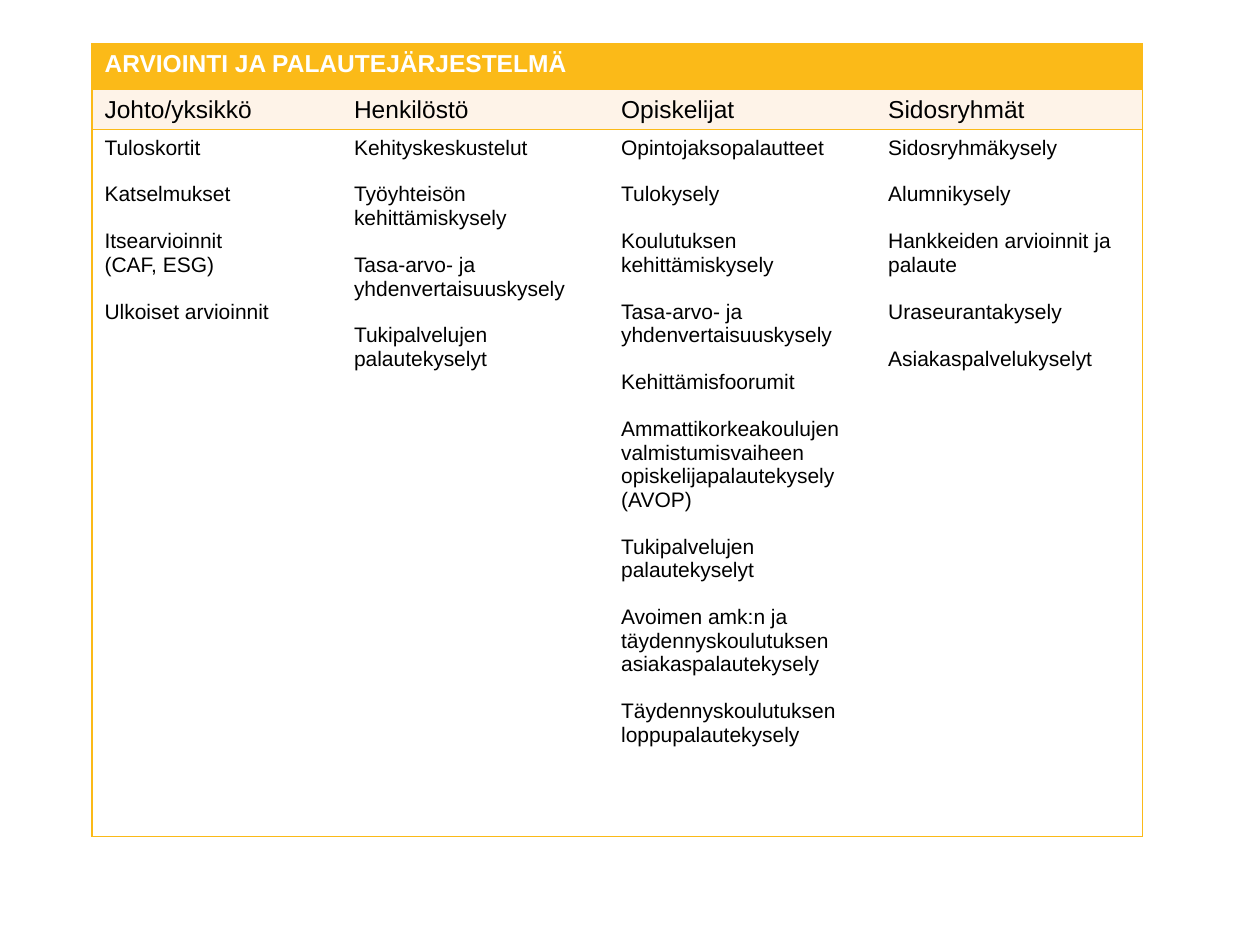
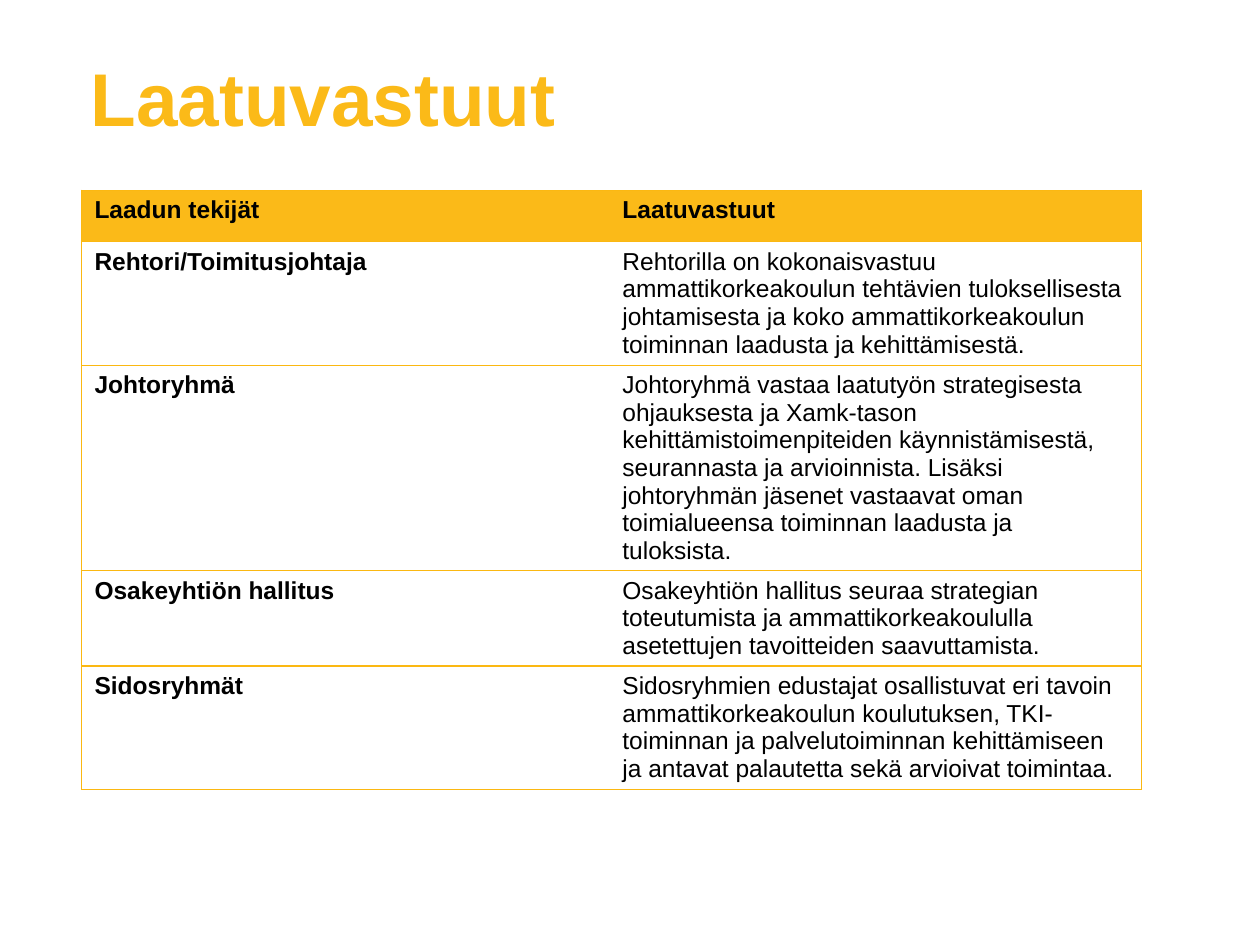
from copy import deepcopy
from dataclasses import dataclass

from lxml import etree
from pptx import Presentation
from pptx.dml.color import RGBColor
from pptx.enum.text import MSO_ANCHOR, MSO_AUTO_SIZE, PP_ALIGN
from pptx.oxml.ns import qn
from pptx.util import Inches, Pt

LEFT = PP_ALIGN.LEFT
MIDDLE = MSO_ANCHOR.MIDDLE
NO_AUTOFIT = MSO_AUTO_SIZE.NONE
TITLE_ONLY, BLANK = 5, 6


@dataclass(frozen=True)
class Theme:
    font: str = "Arial"
    gold: str = "FBBA18"
    rule: str = "FBB812"
    cream: str = "FEF3E8"
    white: str = "FFFFFF"
    black: str = "000000"
    title_size: float = 42.7
    table_size: float = 14
    list_size: float = 12
    list_gap: float = 13.4


THEME = Theme()

# Content of the feedback table: column heading and its list
FEEDBACK_TITLE = "ARVIOINTI JA PALAUTEJÄRJESTELMÄ"
FEEDBACK = {
    "Johto/yksikkö": [
        "Tuloskortit", "Katselmukset", "Itsearvioinnit\v(CAF, ESG)",
        "Ulkoiset arvioinnit",
    ],
    "Henkilöstö": [
        "Kehityskeskustelut", "Työyhteisön kehittämiskysely",
        "Tasa-arvo- ja yhdenvertaisuuskysely", "Tukipalvelujen palautekyselyt",
    ],
    "Opiskelijat": [
        "Opintojaksopalautteet", "Tulokysely", "Koulutuksen kehittämiskysely",
        "Tasa-arvo- ja yhdenvertaisuuskysely", "Kehittämisfoorumit",
        "Ammattikorkeakoulujen valmistumisvaiheen "
        "opiskelijapalautekysely\v(AVOP)",
        "Tukipalvelujen palautekyselyt",
        "Avoimen amk:n ja täydennyskoulutuksen asiakaspalautekysely",
        "Täydennyskoulutuksen loppupalautekysely",
    ],
    "Sidosryhmät": [
        "Sidosryhmäkysely", "Alumnikysely", "Hankkeiden arvioinnit ja palaute",
        "Uraseurantakysely", "Asiakaspalvelukyselyt",
    ],
}

# Content of the responsibility table: actor, duty and row height
RESPONSIBILITIES = [
    ("Laadun tekijät", "Laatuvastuut", 0.41),
    ("Rehtori/Toimitusjohtaja",
     "Rehtorilla on kokonaisvastuu ammattikorkeakoulun tehtävien "
     "tuloksellisesta johtamisesta ja koko ammattikorkeakoulun toiminnan "
     "laadusta ja kehittämisestä.", 0.98),
    ("Johtoryhmä",
     "Johtoryhmä vastaa laatutyön strategisesta ohjauksesta ja Xamk-tason "
     "kehittämistoimenpiteiden käynnistämisestä, seurannasta ja arvioinnista. "
     "Lisäksi johtoryhmän jäsenet vastaavat oman toimialueensa toiminnan "
     "laadusta ja tuloksista.", 1.41),
    ("Osakeyhtiön hallitus",
     "Osakeyhtiön hallitus seuraa strategian toteutumista ja "
     "ammattikorkeakoululla asetettujen tavoitteiden saavuttamista.", 0.75),
    ("Sidosryhmät",
     "Sidosryhmien edustajat osallistuvat eri tavoin ammattikorkeakoulun "
     "koulutuksen, TKI-toiminnan ja palvelutoiminnan kehittämiseen ja antavat "
     "palautetta sekä arvioivat toimintaa.", 0.98),
]


def write_text(text_frame, *texts, size=THEME.table_size, color=THEME.black,
               bold=False, gap=0):
    """Write one paragraph per text, with gap points between them."""
    for index, text in enumerate(texts):
        paragraph = (text_frame.add_paragraph() if index
                     else text_frame.paragraphs[0])
        paragraph.text = text
        paragraph.alignment = LEFT
        paragraph.space_before = Pt(gap if index else 0)
        for run in paragraph.runs:
            run.font.name = THEME.font
            run.font.size = Pt(size)
            run.font.bold = bold
            run.font.color.rgb = RGBColor.from_string(color)
        # Line breaks take the size of the text around them
        for line_break in paragraph._p.findall(qn("a:br")):
            line_break.append(deepcopy(paragraph.runs[0]._r.rPr))


def set_borders(cell, sides, color, width):
    """Draw the borders named in sides (L, R, T, B) and clear the others."""
    properties = cell._tc.get_or_add_tcPr()
    for side in "LRTB":
        line = etree.SubElement(properties, qn(f"a:ln{side}"),
                                w=str(Pt(width)))
        if side in sides:
            fill = etree.SubElement(line, qn("a:solidFill"))
            etree.SubElement(fill, qn("a:srgbClr"), val=color)
        else:
            etree.SubElement(line, qn("a:noFill"))


def add_ruled_table(slide, left, top, widths, heights, fills, color, line_width):
    """Add a table with row rules, an outer frame and one fill per row."""
    frame = slide.shapes.add_table(
        len(heights), len(widths), Inches(left), Inches(top),
        Inches(sum(widths)), Inches(sum(heights)))
    table = frame.table
    table.first_row = table.horz_banding = False
    for column, width in zip(table.columns, widths):
        column.width = Inches(width)
    for row, height, fill in zip(table.rows, heights, fills):
        row.height = Inches(height)
        for index, cell in enumerate(row.cells):
            sides = "TB"
            if index == 0:
                sides += "L"
            if index == len(widths) - 1:
                sides += "R"
            set_borders(cell, sides, color, line_width)
            cell.fill.solid()
            cell.fill.fore_color.rgb = RGBColor.from_string(fill)
    return table


def add_title(slide, text):
    title = slide.shapes.title
    title.left, title.top = Inches(0.62), Inches(0.14)
    title.width, title.height = Inches(8.44), Inches(1.25)
    title.text_frame.auto_size = NO_AUTOFIT
    title.text_frame.vertical_anchor = MIDDLE
    write_text(title.text_frame, text, size=THEME.title_size,
               color=THEME.gold, bold=True)


def build_feedback_slide(presentation):
    slide = presentation.slides.add_slide(presentation.slide_layouts[BLANK])
    table = add_ruled_table(
        slide, 0.73, 0.35, [1.98] + [2.12] * 3, [0.36, 0.31, 5.61],
        [THEME.gold, THEME.cream, THEME.white], THEME.gold, 1)
    # Heading across all columns
    table.cell(0, 0).merge(table.cell(0, len(FEEDBACK) - 1))
    write_text(table.cell(0, 0).text_frame, FEEDBACK_TITLE,
               color=THEME.white, bold=True)
    # One column per group
    for column, (group, methods) in enumerate(FEEDBACK.items()):
        write_text(table.cell(1, column).text_frame, group)
        write_text(table.cell(2, column).text_frame, *methods,
                   size=THEME.list_size, gap=THEME.list_gap)


def build_responsibility_slide(presentation):
    slide = presentation.slides.add_slide(
        presentation.slide_layouts[TITLE_ONLY])
    add_title(slide, "Laatuvastuut")
    heights = [height for _, _, height in RESPONSIBILITIES]
    fills = [THEME.gold] + [THEME.white] * (len(heights) - 1)
    table = add_ruled_table(slide, 0.65, 1.51, [4.19, 4.22], heights, fills,
                            THEME.rule, 0.75)
    for row, (actor, duty, _) in enumerate(RESPONSIBILITIES):
        write_text(table.cell(row, 0).text_frame, actor, bold=True)
        write_text(table.cell(row, 1).text_frame, duty, bold=row == 0)


def main():
    presentation = Presentation()
    presentation.slide_width = Inches(10)
    presentation.slide_height = Inches(7.5)
    build_feedback_slide(presentation)
    build_responsibility_slide(presentation)
    presentation.save("out.pptx")


if __name__ == "__main__":
    main()
